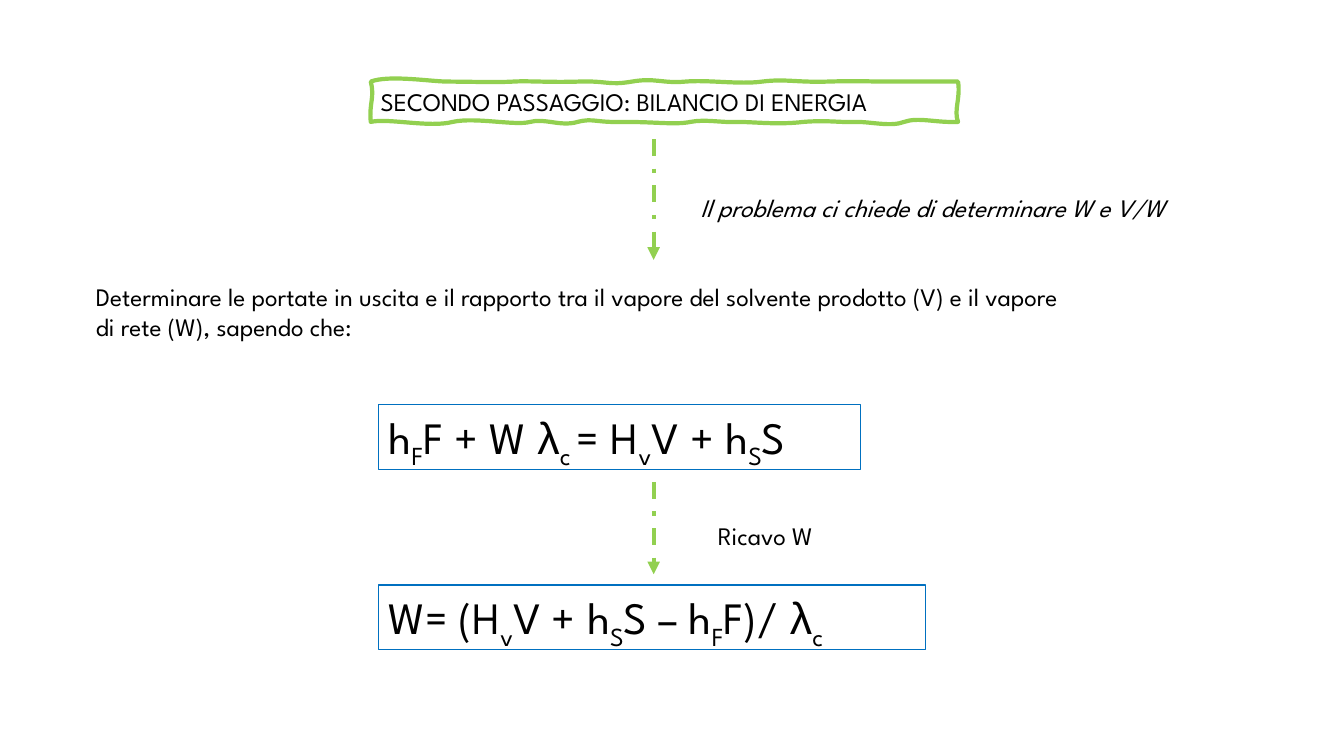
from dataclasses import dataclass

from lxml.etree import SubElement
from pptx import Presentation
from pptx.dml.color import RGBColor
from pptx.enum.dml import MSO_LINE
from pptx.enum.shapes import MSO_CONNECTOR, MSO_SHAPE
from pptx.enum.text import MSO_ANCHOR, MSO_AUTO_SIZE, PP_ALIGN
from pptx.oxml.ns import qn
from pptx.slide import Slide
from pptx.text.text import TextFrame
from pptx.util import Pt

GREEN = RGBColor(0x92, 0xD0, 0x50)
BLUE = RGBColor(0x00, 0x70, 0xC0)
WHITE = RGBColor(0xFF, 0xFF, 0xFF)
BLACK = RGBColor(0x00, 0x00, 0x00)
MAIN_FONT = "League Spartan"
GREEK_FONT = "Arial"
ARROW_X = 466.9
EQUATION_LEFT = 270.5
UNITS_PER_POINT = 100

Point = tuple[float, float]


@dataclass
class Span:
    text: str
    subscript: bool = False
    font: str = MAIN_FONT


@dataclass
class TextStyle:
    size: float = 18
    italic: bool = False


@dataclass
class TextBlock:
    left: float
    top: float
    width: float
    height: float
    lines: list[list[Span]]
    style: TextStyle
    framed: bool = False


@dataclass
class Arrow:
    top: float
    bottom: float


BODY = TextStyle()
NOTE = TextStyle(italic=True)
EQUATION = TextStyle(size=32)

HEADING = [[Span("SECONDO PASSAGGIO: BILANCIO DI ENERGIA")]]

BLOCKS = [
    TextBlock(EQUATION_LEFT, 289.1, 344, 46.1, [[
        Span("h"), Span("F", True), Span("F + W "), Span("λ", font=GREEK_FONT),
        Span("c ", True), Span("= H"), Span("v", True), Span("V + h"),
        Span("S", True), Span("S"),
    ]], EQUATION, framed=True),
    TextBlock(61.4, 197.3, 846, 72.7, [
        [Span("Determinare le portate in uscita e il rapporto tra il vapore "
              "del solvente prodotto (V) e il vapore")],
        [Span("di rete (W), sapendo che:")],
    ], BODY),
    TextBlock(493.2, 133.9, 420.5, 28.8,
              [[Span("Il problema ci chiede di determinare W e V/W")]], NOTE),
    TextBlock(EQUATION_LEFT, 418, 390.7, 46.1, [[
        Span("W= (H"), Span("v", True), Span("V + h"), Span("S", True),
        Span("S – h"), Span("F", True), Span("F)/ "),
        Span("λ", font=GREEK_FONT), Span("c", True),
    ]], EQUATION, framed=True),
    TextBlock(505.7, 367.9, 97.9, 28.8, [[Span("Ricavo W")]], BODY),
]

ARROWS = [Arrow(99.4, 185.6), Arrow(344.2, 410.2)]

# Hand-drawn frame: two control points and an end point for each curve
FRAME_START = (264.8, 58.3)
FRAME_CURVES = [
    ((277.9, 53.3), (308.2, 58.3), (319.7, 58.3)),
    ((331.2, 58.3), (355.7, 59), (366.5, 58.3)),
    ((377.3, 57.6), (391.7, 59), (413.3, 58.3)),
    ((434.2, 57.6), (434.2, 61.2), (451.4, 58.3)),
    ((468, 55.4), (473, 59.8), (489.6, 58.3)),
    ((505.4, 56.9), (528.5, 60.5), (544.3, 58.3)),
    ((560.9, 56.2), (568.8, 59), (591.1, 58.3)),
    ((613.4, 57.6), (620.6, 58.3), (633.6, 58.3)),
    ((645.8, 58.3), (666, 58.3), (684.3, 58.3)),
    ((686.2, 70.6), (681.1, 78.5), (684.3, 87.1)),
    ((668.2, 87.8), (655.9, 83.5), (645.8, 87.1)),
    ((636.5, 90.7), (622.8, 87.1), (612, 87.1)),
    ((601.2, 87.8), (591.8, 85.7), (573.8, 87.1)),
    ((555.8, 89.3), (538.6, 87.1), (527, 87.1)),
    ((515.5, 87.8), (504, 85), (493.2, 87.1)),
    ((482.4, 89.3), (468.7, 87.1), (446.4, 87.1)),
    ((424.8, 87.8), (424.1, 84.2), (412.6, 87.1)),
    ((400.3, 90.7), (388.8, 84.2), (378.7, 87.1)),
    ((367.9, 90), (339.8, 83.5), (323.3, 87.1)),
    ((306.7, 91.4), (277.2, 84.2), (264.8, 87.1)),
    ((263.5, 73.4), (267.8, 69.8), (264.8, 58.3)),
]


def to_units(point: Point) -> list[int]:
    """Outline units, counted from the frame's top left corner."""
    return [round((value - origin) * UNITS_PER_POINT)
            for value, origin in zip(point, FRAME_START)]


def fill_text(frame: TextFrame, lines: list[list[Span]], style: TextStyle) -> None:
    frame_format = {"word_wrap": True, "auto_size": MSO_AUTO_SIZE.SHAPE_TO_FIT_TEXT,
                    "vertical_anchor": MSO_ANCHOR.TOP}
    for name, value in frame_format.items():
        setattr(frame, name, value)
    for index, line in enumerate(lines):
        para = frame.add_paragraph() if index else frame.paragraphs[0]
        para.alignment = PP_ALIGN.LEFT
        for item in line:
            span = para.add_run()
            span.text = item.text
            font_format = {"name": item.font, "size": Pt(style.size),
                           "italic": style.italic}
            for name, value in font_format.items():
                setattr(span.font, name, value)
            span.font.color.rgb = BLACK
            if item.subscript:
                span._r.get_or_add_rPr().set("baseline", "-25000")


def add_block(page: Slide, block: TextBlock) -> None:
    area = [Pt(value) for value in (block.left, block.top, block.width, block.height)]
    if block.framed:
        box = page.shapes.add_shape(MSO_SHAPE.RECTANGLE, *area)
        box.shadow.inherit = False
        box.fill.solid()
        box.fill.fore_color.rgb = WHITE
        box.line.color.rgb = BLUE
        box.line.width = Pt(1)
    else:
        box = page.shapes.add_textbox(*area)
    fill_text(box.text_frame, block.lines, block.style)


def add_heading(page: Slide) -> None:
    builder = page.shapes.build_freeform(
        *(value * UNITS_PER_POINT for value in FRAME_START),
        scale=Pt(1) / UNITS_PER_POINT)
    ends = [tuple(value * UNITS_PER_POINT for value in curve[-1])
            for curve in FRAME_CURVES]
    builder.add_line_segments(ends, close=True)
    heading = builder.convert_to_shape()
    # Bend each straight side into its curve
    sides = list(heading._element.iter(qn("a:lnTo")))
    for side, curve in zip(sides, FRAME_CURVES):
        bend = side.makeelement(qn("a:cubicBezTo"))
        for point in curve:
            x, y = to_units(point)
            SubElement(bend, qn("a:pt"), x=str(x), y=str(y))
        side.getparent().replace(side, bend)
    heading.shadow.inherit = False
    heading.fill.background()
    heading.line.color.rgb = GREEN
    heading.line.width = Pt(3)
    fill_text(heading.text_frame, HEADING, BODY)


def add_arrow(page: Slide, arrow: Arrow) -> None:
    connector = page.shapes.add_connector(
        MSO_CONNECTOR.STRAIGHT, Pt(ARROW_X), Pt(arrow.top), Pt(ARROW_X), Pt(arrow.bottom))
    connector.line.color.rgb = GREEN
    connector.line.width = Pt(3)
    connector.line.dash_style = MSO_LINE.DASH_DOT
    properties = connector._element.spPr
    SubElement(properties.find(qn("a:ln")), qn("a:tailEnd"), type="triangle")
    SubElement(properties, qn("a:effectLst"))


def main() -> None:
    deck = Presentation()
    deck.slide_width, deck.slide_height = Pt(960), Pt(540)
    page = deck.slides.add_slide(deck.slide_layouts[6])
    # Heading in its hand-drawn frame
    add_heading(page)
    # Texts, equations and the arrows between them
    for block in BLOCKS:
        add_block(page, block)
    for arrow in ARROWS:
        add_arrow(page, arrow)
    deck.save("out.pptx")


if __name__ == "__main__":
    main()
